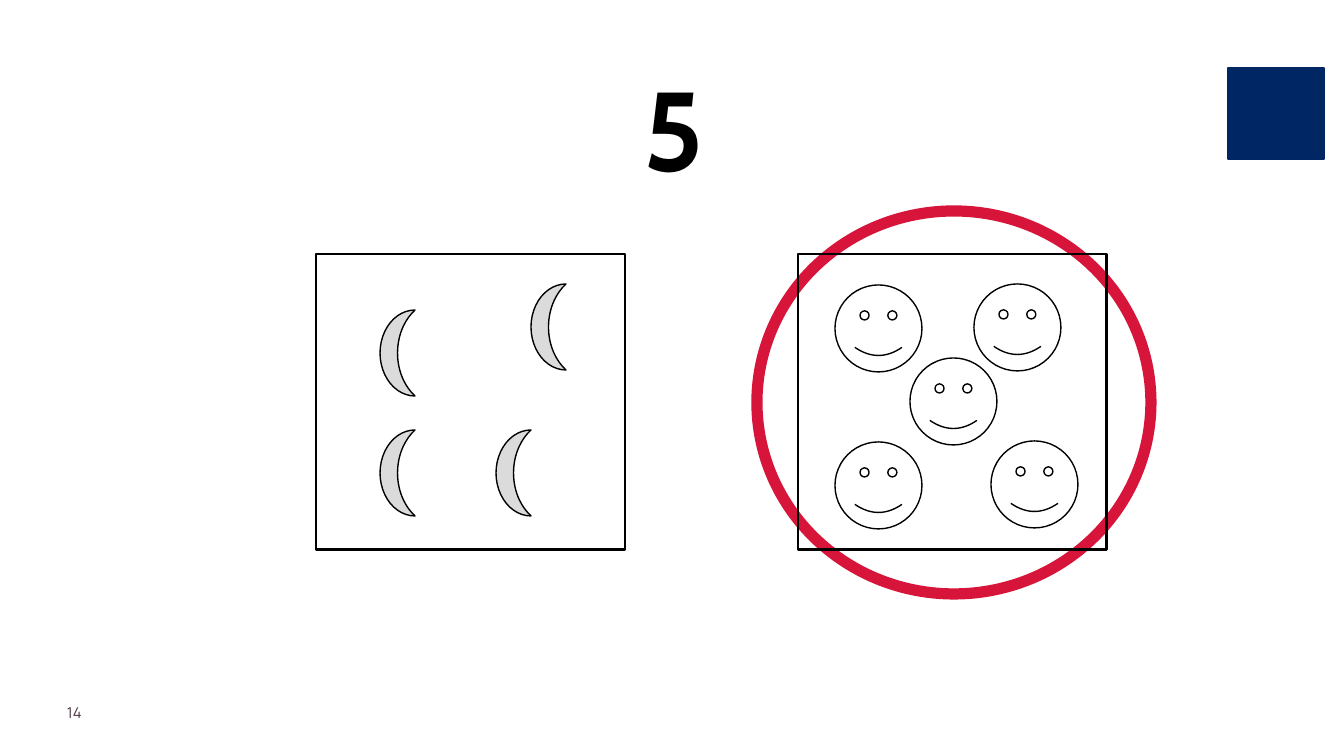
"""Build a counting slide: the number 5, a box of moons and a circled box of smiley faces."""
from pptx import Presentation
from pptx.dml.color import RGBColor
from pptx.enum.shapes import MSO_SHAPE as SHAPE
from pptx.enum.text import MSO_ANCHOR as ANCHOR, MSO_AUTO_SIZE as AUTO, PP_ALIGN as ALIGN
from pptx.util import Pt

BLACK = RGBColor(0x00, 0x00, 0x00)
RED = RGBColor(0xD7, 0x15, 0x3A)
NAVY = RGBColor(0x00, 0x26, 0x64)
GREY = RGBColor(0xDB, 0xDB, 0xDB)
PLUM = RGBColor(0x4B, 0x32, 0x41)

TITLE, PAGE = "5", "14"
RING = (757, 211, 394, 383)
CORNER_BLOCK = (1228, 68, 96, 91)
TITLE_BOX = (630, 46, 179, 163)
PAGE_BOX = (67, 704, 106, 27)
GROUPS = [
    (SHAPE.RECTANGLE, (309, 296), None, 1.5, [(316, 254), (798, 254)]),
    (SHAPE.MOON, (35, 86), GREY, 0.75, [(380, 310), (380, 430), (531, 284), (496, 430)]),
    (SHAPE.SMILEY_FACE, (87, 87), None, 0.75,
     [(835, 285), (974, 284), (835, 442), (991, 441), (910, 358)]),
]
PX = 914400 / 134.4


def px(*lengths):
    return [round(n * PX) for n in lengths]


def add_shape(kind, box, fill, line, width):
    sp = slide.shapes.add_shape(kind, *px(*box))
    sp.shadow.inherit = False
    if fill is None:
        sp.fill.background()
    else:
        sp.fill.solid()
        sp.fill.fore_color.rgb = fill
    sp.line.color.rgb = line
    sp.line.width = Pt(width)


def write(sp, text, font, size, color, bold=False, inset=0):
    tf = sp.text_frame
    tf.word_wrap = True
    tf.vertical_anchor = ANCHOR.TOP
    tf.margin_left, tf.margin_top, tf.margin_right, tf.margin_bottom = px(*[inset] * 4)
    p = tf.paragraphs[0]
    p.text = text
    p.alignment = ALIGN.LEFT
    p.font.name, p.font.size, p.font.bold = font, Pt(size), bold
    p.font.color.rgb = color


prs = Presentation()
prs.slide_width, prs.slide_height = px(1344, 756)
slide = prs.slides.add_slide(prs.slide_layouts[5])

title = slide.shapes.title
title.left, title.top, title.width, title.height = px(*TITLE_BOX)
write(title, TITLE, "Cabin", 60, BLACK, bold=True, inset=13)
title.text_frame.auto_size = AUTO.SHAPE_TO_FIT_TEXT

add_shape(SHAPE.OVAL, RING, None, RED, 6)
write(slide.shapes.add_textbox(*px(*PAGE_BOX)), PAGE, "Manrope", 8, PLUM)
add_shape(SHAPE.RECTANGLE, CORNER_BLOCK, NAVY, NAVY, 0.75)

for kind, size, fill, width, spots in GROUPS:
    for spot in spots:
        add_shape(kind, spot + size, fill, BLACK, width)

prs.save("out.pptx")
